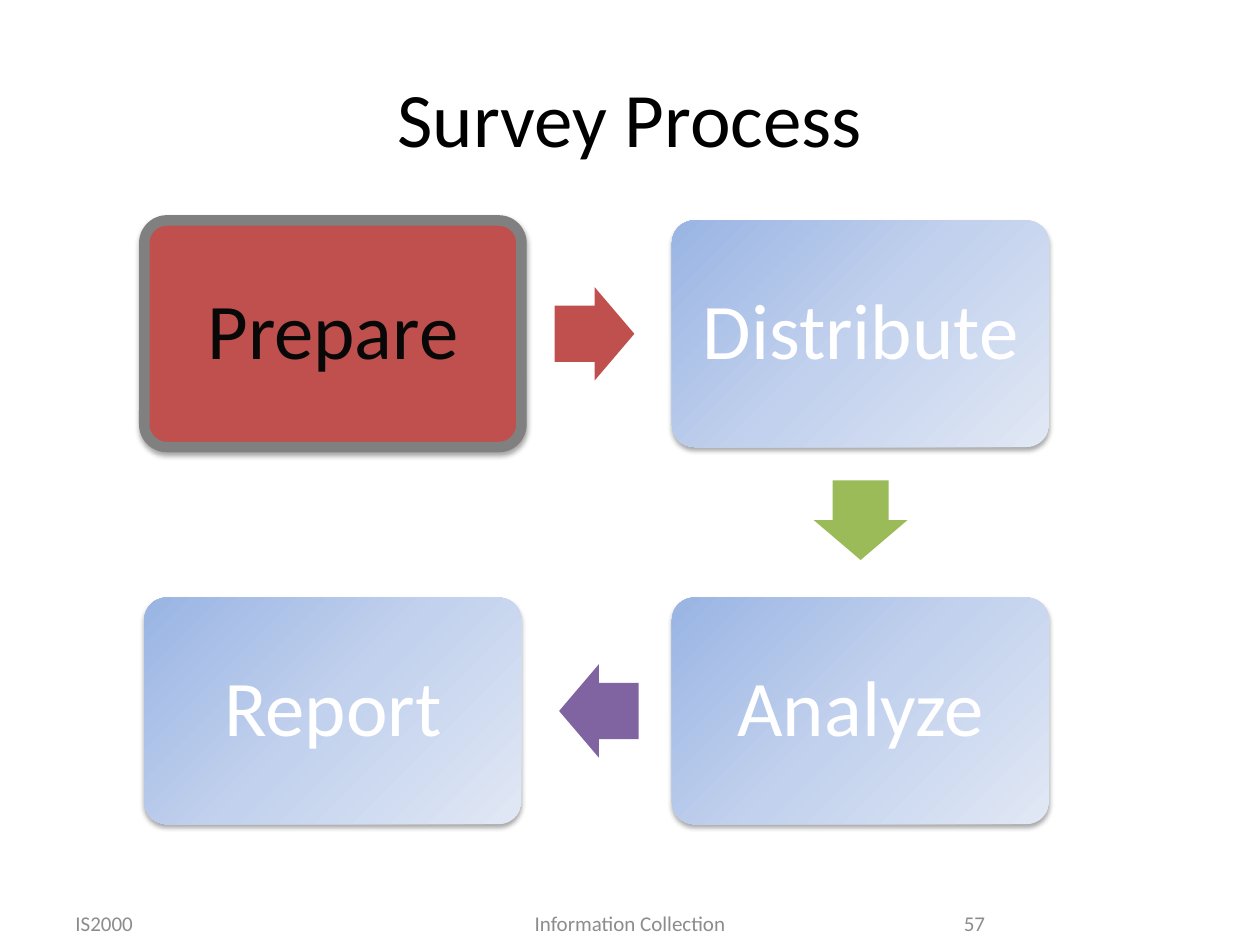
from pptx import Presentation
from pptx.dml.color import RGBColor
from pptx.enum.shapes import MSO_SHAPE
from pptx.enum.text import MSO_ANCHOR, PP_ALIGN
from pptx.oxml import parse_xml
from pptx.oxml.ns import nsdecls, qn
from pptx.util import Pt

ROUNDED, ARROW = MSO_SHAPE.ROUNDED_RECTANGLE, MSO_SHAPE.RIGHT_ARROW
LEFT, CENTER, RIGHT = PP_ALIGN.LEFT, PP_ALIGN.CENTER, PP_ALIGN.RIGHT
MIDDLE = MSO_ANCHOR.MIDDLE
FONT = "Calibri"
COLORS = {
    "title": "000000", "active text": "080808", "step text": "FFFFFF",
    "active": "C0504D", "border": "808080", "footer": "8C8C8C",
    "green": "9BBB59", "purple": "8064A2",
    "light": "9AB5E4", "lighter": "C2D1ED", "lightest": "E1E8F5",
}
GRADIENT_STOPS = [(0, "light"), (50, "lighter"), (100, "lightest")]


def color(name):
    return RGBColor.from_string(COLORS[name])


def write(shape, text, size, color_name, alignment):
    text_frame = shape.text_frame
    text_frame.text = text
    text_frame.word_wrap = True
    text_frame.vertical_anchor = MIDDLE
    paragraph = text_frame.paragraphs[0]
    paragraph.alignment = alignment
    font = paragraph.runs[0].font
    font.name, font.size = FONT, Pt(size)
    font.color.rgb = color(color_name)
    return paragraph


presentation = Presentation()
presentation.slide_width, presentation.slide_height = Pt(720), Pt(540)
slide = presentation.slides.add_slide(presentation.slide_layouts[5])

title = slide.shapes.title
title.left, title.top, title.width, title.height = Pt(36), Pt(21.6), Pt(648), Pt(90)
write(title, "Survey Process", 44, "title", CENTER)

# Steps run clockwise on a two by two grid
STEP_WIDTH, STEP_HEIGHT = 215.5, 129.5
COLUMNS, ROWS = (82.5, 384), (126, 341.5)
steps = [("Prepare", 0, 0), ("Distribute", 1, 0), ("Analyze", 1, 1), ("Report", 0, 1)]
for name, column, row in steps:
    active = name == "Prepare"
    step = slide.shapes.add_shape(ROUNDED, Pt(COLUMNS[column]), Pt(ROWS[row]),
                                  Pt(STEP_WIDTH), Pt(STEP_HEIGHT))
    step.adjustments[0] = 0.1
    step.fill.solid()
    step.fill.fore_color.rgb = color("active")
    properties = step._element.spPr
    if active:
        step.line.color.rgb = color("border")
        step.line.width = Pt(6)
    else:
        step.line.fill.background()
        stops = "".join(
            f'<a:gs pos="{position * 1000}"><a:srgbClr val="{COLORS[stop]}"/></a:gs>'
            for position, stop in GRADIENT_STOPS)
        properties.replace(properties.find(qn("a:solidFill")), parse_xml(
            f'<a:gradFill {nsdecls("a")} rotWithShape="1"><a:gsLst>{stops}</a:gsLst>'
            '<a:path path="circle"><a:fillToRect r="100000" b="100000"/></a:path>'
            '</a:gradFill>'))
    step.shadow.inherit = False
    properties.find(qn("a:effectLst")).append(parse_xml(
        f'<a:outerShdw {nsdecls("a")} blurRad="{Pt(3.1)}" dist="{Pt(1.8)}" '
        'dir="5400000" rotWithShape="0"><a:srgbClr val="000000">'
        '<a:alpha val="35000"/></a:srgbClr></a:outerShdw>'))

    paragraph = write(step, name, 45, "active text" if active else "step text", CENTER)
    paragraph.line_spacing = 0.9
    text_frame = step.text_frame
    text_frame.margin_left = text_frame.margin_right = Pt(13.5)
    text_frame.margin_top = text_frame.margin_bottom = Pt(13.5)

arrows = [(317, 164, 0, "active"), (469, 270.5, 90, "green"), (319.5, 379.5, 180, "purple")]
for left, top, rotation, fill in arrows:
    arrow = slide.shapes.add_shape(ARROW, Pt(left), Pt(top), Pt(45.5), Pt(53.5))
    arrow.adjustments[0], arrow.adjustments[1] = 0.6, 0.5
    arrow.rotation = rotation
    arrow.fill.solid()
    arrow.fill.fore_color.rgb = color(fill)
    arrow.line.fill.background()
    arrow.shadow.inherit = False

footers = [("IS2000", 36, 168, LEFT), ("Information Collection", 221, 278, CENTER),
           ("57", 516, 54, RIGHT)]
for text, left, width, alignment in footers:
    footer = slide.shapes.add_textbox(Pt(left), Pt(516), Pt(width), Pt(22.5))
    write(footer, text, 12, "footer", alignment)

presentation.save("out.pptx")
